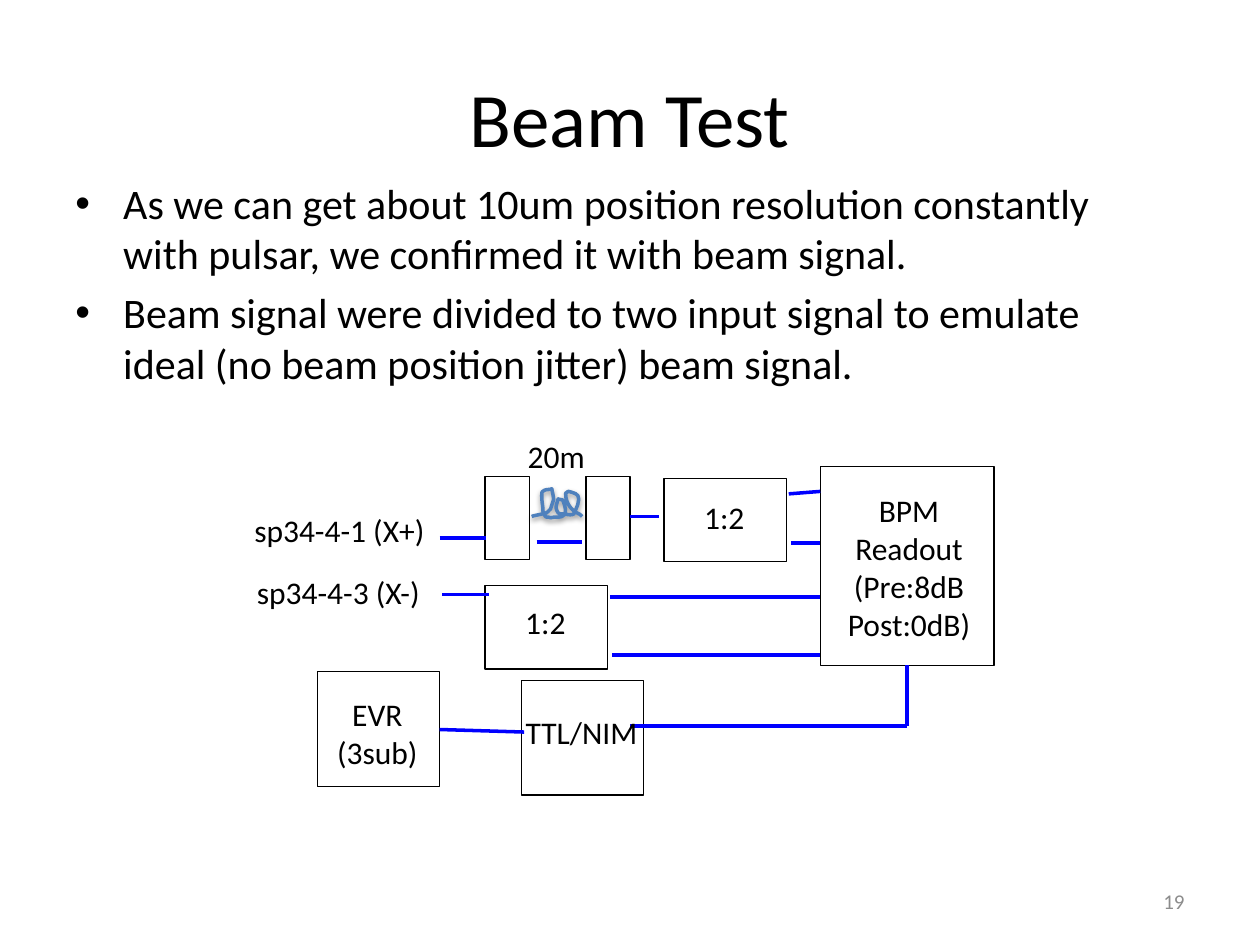
from dataclasses import dataclass

from lxml import etree
from pptx import Presentation
from pptx import util as u
from pptx.dml.color import RGBColor
from pptx.enum import shapes, text
from pptx.oxml import parse_xml
from pptx.oxml.ns import nsdecls, qn


@dataclass(frozen=True)
class Theme:
    font: str = "Calibri"
    ink: str = "000000"
    muted: str = "8C8C8C"
    cable: str = "0000FF"
    coil: str = "4F81BD"
    title: int = 44
    body: int = 24
    label: int = 18
    number: int = 12
    outline: float = 0.75
    wire: float = 2


T = Theme()
AL = text.PP_ALIGN
ANCHOR = text.MSO_ANCHOR

prs = Presentation()
prs.slide_width, prs.slide_height = u.Inches(10), u.Inches(7.5)
s = prs.slides.add_slide(prs.slide_layouts[5])


def write(content, at, sp=None, size=T.label, color=T.ink, align=AL.LEFT,
          anchor=ANCHOR.TOP, wrap=True, grow=False, bullet=False):
    """Write one paragraph per line of content, in sp or in a new text box."""
    box = [u.Inches(v) for v in at]
    sp = sp or s.shapes.add_textbox(*box)
    sp.left, sp.top, sp.width, sp.height = box
    tf = sp.text_frame
    tf.word_wrap, tf.vertical_anchor = wrap, anchor
    tf.auto_size = (text.MSO_AUTO_SIZE.SHAPE_TO_FIT_TEXT if grow
                    else text.MSO_AUTO_SIZE.NONE)
    for i, line in enumerate(content.split("\n")):
        p = tf.add_paragraph() if i else tf.paragraphs[0]
        p.alignment = align
        r = p.add_run()
        r.text = line
        r.font.name, r.font.size = T.font, u.Pt(size)
        r.font.color.rgb = RGBColor.from_string(color)
        if bullet:
            p.space_before = u.Pt(size * 0.2)
            pPr = p._p.get_or_add_pPr()
            pPr.set("marL", str(u.Inches(0.38)))
            pPr.set("indent", str(u.Inches(-0.38)))
            etree.SubElement(pPr, qn("a:buFont"), typeface="Arial")
            etree.SubElement(pPr, qn("a:buChar"), char="•")


# Title, bullets and slide number
write("Beam Test", (0.5, 0.3, 9, 1.25), sp=s.shapes.title, size=T.title,
      align=AL.CENTER, anchor=ANCHOR.MIDDLE)
write("As we can get about 10um position resolution constantly with pulsar, "
      "we confirmed it with beam signal.\n"
      "Beam signal were divided to two input signal to emulate ideal "
      "(no beam position jitter) beam signal.",
      (0.5, 1.36, 8.84, 4.95), size=T.body, bullet=True)
write("19", (7.17, 6.95, 2.33, 0.4), size=T.number, color=T.muted,
      align=AL.RIGHT, anchor=ANCHOR.MIDDLE)

# Device boxes
boxes = [
    (2.52, 5.33, 0.97, 0.91),  # EVR
    (4.14, 5.4, 0.97, 0.91),   # TTL/NIM
    (5.27, 3.8, 0.97, 0.66),   # upper divider
    (3.85, 4.65, 0.97, 0.66),  # lower divider
    (6.51, 3.7, 1.38, 1.58),   # BPM readout
    (3.85, 3.78, 0.35, 0.66),  # coil, left end
    (4.65, 3.78, 0.35, 0.66),  # coil, right end
]
for at in boxes:
    sp = s.shapes.add_shape(shapes.MSO_SHAPE.RECTANGLE, *[u.Inches(v) for v in at])
    sp.shadow.inherit = False
    sp.fill.background()
    sp.line.color.rgb = RGBColor.from_string(T.ink)
    sp.line.width = u.Pt(T.outline)

# Cables
cables = [
    (3.49, 4.27, 3.86, 4.27), (3.51, 4.72, 3.88, 4.72),  # inputs
    (6.26, 3.92, 6.51, 3.9), (6.28, 4.31, 6.51, 4.31),   # upper divider out
    (4.84, 4.74, 6.51, 4.74), (4.86, 5.2, 6.51, 5.2),    # lower divider out
    (5, 5.76, 7.2, 5.76), (7.2, 5.76, 7.2, 5.28),        # trigger to readout
    (4.26, 4.3, 4.62, 4.3), (5, 4.1, 5.23, 4.1),         # around the coil
    (3.49, 5.79, 4.16, 5.81),                            # EVR to TTL/NIM
]
for ends in cables:
    c = s.shapes.add_connector(shapes.MSO_CONNECTOR.STRAIGHT,
                               *[u.Inches(v) for v in ends])
    c.line.color.rgb = RGBColor.from_string(T.cable)
    c.line.width = u.Pt(T.wire)
    etree.SubElement(c._element.spPr, qn("a:effectLst"))

# Coiled cable: Bezier segments (two controls and an end), drawn in short steps
start = (4.22, 4.1)
curves = [
    (4.24, 4.09, 4.32, 4.08, 4.34, 4.07), (4.35, 4.06, 4.36, 4.05, 4.37, 4.04),
    (4.4, 3.94, 4.4, 3.99, 4.38, 3.88), (4.36, 3.89, 4.33, 3.88, 4.31, 3.9),
    (4.3, 3.9, 4.3, 3.92, 4.3, 3.94), (4.3, 3.98, 4.31, 4.02, 4.31, 4.06),
    (4.32, 4.07, 4.32, 4.09, 4.33, 4.1), (4.34, 4.11, 4.35, 4.1, 4.37, 4.11),
    (4.4, 4.1, 4.43, 4.11, 4.46, 4.1), (4.51, 4.08, 4.48, 4, 4.47, 3.98),
    (4.47, 3.96, 4.45, 3.97, 4.43, 3.96), (4.42, 4, 4.4, 4.03, 4.43, 4.07),
    (4.44, 4.08, 4.46, 4.08, 4.47, 4.08), (4.5, 4.08, 4.55, 4.1, 4.56, 4.07),
    (4.63, 3.92, 4.58, 3.92, 4.51, 3.9), (4.5, 3.91, 4.49, 3.91, 4.49, 3.92),
    (4.49, 3.98, 4.52, 4.03, 4.56, 4.06), (4.61, 4.09, 4.59, 4.07, 4.62, 4.1),
]
STEPS = 6
points, pen = [], start
for x1, y1, x2, y2, x3, y3 in curves:
    for t in (k / STEPS for k in range(1, STEPS + 1)):
        weights = ((1 - t) ** 3, 3 * t * (1 - t) ** 2, 3 * t * t * (1 - t), t ** 3)
        points.append(tuple(
            u.Inches(sum(w * v for w, v in zip(weights, axis)))
            for axis in ((pen[0], x1, x2, x3), (pen[1], y1, y2, y3))))
    pen = (x3, y3)
fb = s.shapes.build_freeform(*[u.Inches(v) for v in start])
fb.add_line_segments(points, close=False)
coil = fb.convert_to_shape()
coil.fill.background()
coil.line.color.rgb = RGBColor.from_string(T.coil)
coil.line.width = u.Pt(T.wire)
coil._element.spPr.append(parse_xml(
    f'<a:effectLst {nsdecls("a")}><a:outerShdw blurRad="{u.Pt(3.1)}" '
    f'dist="{u.Pt(1.6)}" dir="5400000" rotWithShape="0"><a:srgbClr val="{T.ink}">'
    '<a:alpha val="38000"/></a:srgbClr></a:outerShdw></a:effectLst>'))

# Labels
labels = [
    ("sp34-4-1 (X+)", (1.92, 4.01, 1.57, 0.4), AL.LEFT),
    ("sp34-4-3 (X-)", (1.94, 4.5, 1.52, 0.4), AL.LEFT),
    ("20m", (4.09, 3.42, 0.66, 0.4), AL.LEFT),
    ("1:2", (5.49, 3.9, 0.53, 0.4), AL.LEFT),
    ("1:2", (4.07, 4.74, 0.53, 0.4), AL.LEFT),
    ("EVR\n(3sub)", (2.57, 5.47, 0.85, 0.71), AL.CENTER),
    ("TTL/NIM", (4.07, 5.61, 1.09, 0.4), AL.CENTER),
]
for content, at, align in labels:
    write(content, at, align=align, wrap=False, grow=True)
write("BPM\nReadout (Pre:8dB\nPost:0dB)", (6.6, 3.85, 1.23, 1.31),
      align=AL.CENTER, grow=True)

prs.save("out.pptx")
